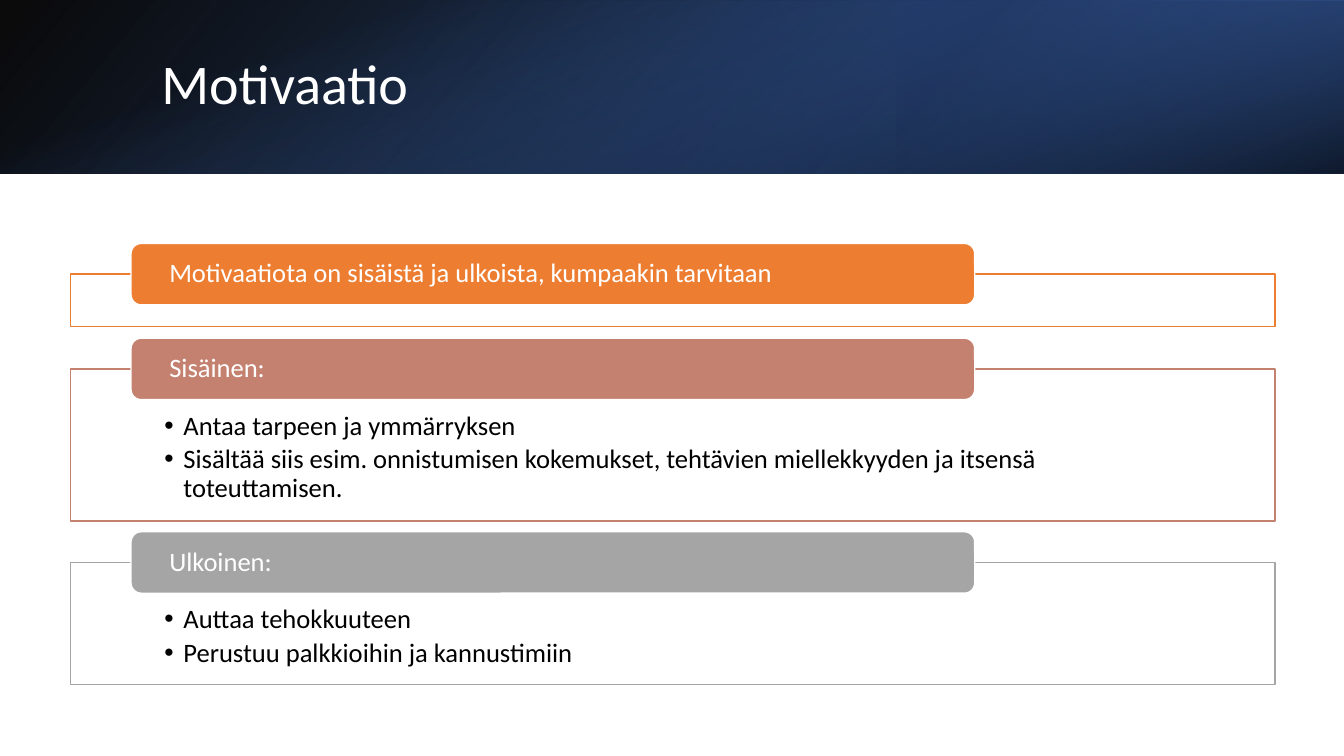
from pptx import Presentation
from pptx.dml.color import RGBColor
from pptx.enum.shapes import MSO_SHAPE as SHAPE
from pptx.enum.text import MSO_ANCHOR as ANCHOR, MSO_AUTO_SIZE as AUTO, PP_ALIGN as ALIGN
from pptx.oxml import parse_xml
from pptx.oxml.ns import nsdecls, qn
from pptx.util import Inches, Pt
from lxml.etree import SubElement

THEME = {
    "font": "Calibri", "title": Pt(40), "text": Pt(19),
    "white": "FFFFFF", "black": "000000",
    "orange": "ED7D31", "rose": "C48170", "grey": "A5A5A5",
    "navy": "203864", "blue": "2F5597", "sky": "4472C4",
}


def add_box(slide, kind, left, top, width, height):
    sp = slide.shapes.add_shape(kind, *map(Inches, (left, top, width, height)))
    sp.shadow.inherit = False
    return sp


def format_text(sp, lines, size, color, insets, anchor, after=0):
    tf = sp.text_frame
    left, top, right, bottom = map(Inches, insets)
    frame = {"word_wrap": True, "auto_size": AUTO.NONE, "vertical_anchor": anchor,
             "margin_left": left, "margin_top": top,
             "margin_right": right, "margin_bottom": bottom}
    for name, value in frame.items():
        setattr(tf, name, value)
    tf.text = "\n".join(lines)
    for p in tf.paragraphs:
        for name, value in {"alignment": ALIGN.LEFT, "line_spacing": 0.9,
                            "space_before": Pt(0), "space_after": Pt(after)}.items():
            setattr(p, name, value)
        for r in p.runs:
            r.font.name = THEME["font"]
            r.font.size = THEME[size]
            r.font.color.rgb = RGBColor.from_string(THEME[color])


prs = Presentation()
prs.slide_width, prs.slide_height = Inches(13.333), Inches(7.5)
slide = prs.slides.add_slide(prs.slide_layouts[3])
title, *lists = slide.placeholders
tree = title._element.getparent()

BANNER = 1.72
banner_layers = [
    ((0, 0, 13.333, BANNER), 0, True, 140, [(0, "black", 96), (100, "blue", 100)]),
    ((8.89, 0, 4.443, BANNER), 180, True, 320, [(19, "navy", 68), (100, "sky", 79)]),
    ((5.8, -5.8, BANNER, 13.333), 90, False, 340, [(23, "sky", 0), (99, "black", 74)]),
]
for place, rotation, flipped, angle, stops in banner_layers:
    sp = add_box(slide, SHAPE.RECTANGLE, *place)
    sp.rotation = rotation
    spPr = sp._element.spPr
    if flipped:
        spPr.find(qn("a:xfrm")).set("flipH", "1")
    marks = "".join(
        f'<a:gs pos="{pos * 1000}"><a:srgbClr val="{THEME[color]}">'
        f'<a:alpha val="{alpha * 1000}"/></a:srgbClr></a:gs>'
        for pos, color, alpha in stops)
    spPr.find(qn("a:prstGeom")).addnext(parse_xml(
        f'<a:gradFill rotWithShape="1" {nsdecls("a")}><a:gsLst>{marks}</a:gsLst>'
        f'<a:lin ang="{angle * 60000}" scaled="0"/></a:gradFill>'))
    sp.line.fill.background()

tree.append(title._element)
title.left, title.top, title.width, title.height = map(Inches, (1.5, 0.38, 10.98, 0.96))
format_text(title, ["Motivaatio"], "title", "white", (0.1, 0.05, 0.1, 0.05), ANCHOR.MIDDLE)

LEFT, WIDTH, BAND = 0.7, 11.95, 0.61
sections = [
    (2.72, 0.52, "orange", "Motivaatiota on sisäistä ja ulkoista, kumpaakin tarvitaan", []),
    (3.66, 1.51, "rose", "Sisäinen:", [
        "Antaa tarpeen ja ymmärryksen",
        "Sisältää siis esim. onnistumisen kokemukset, tehtävien miellekkyyden ja itsensä toteuttamisen."]),
    (5.58, 1.21, "grey", "Ulkoinen:", [
        "Auttaa tehokkuuteen", "Perustuu palkkioihin ja kannustimiin"]),
]
bodies = iter(lists)
for top, height, color, heading, points in sections:
    accent = RGBColor.from_string(THEME[color])
    white = RGBColor.from_string(THEME["white"])
    frame = add_box(slide, SHAPE.RECTANGLE, LEFT, top, WIDTH, height)
    band = add_box(slide, SHAPE.ROUNDED_RECTANGLE, 1.3, top - BAND / 2, 8.37, BAND)
    for sp, fill, line in ((frame, white, accent), (band, accent, white)):
        sp.fill.solid()
        sp.fill.fore_color.rgb = fill
        sp.line.color.rgb = line
        sp.line.width = Pt(1)
    fill_color = frame._element.spPr.find(qn("a:solidFill")).find(qn("a:srgbClr"))
    SubElement(fill_color, qn("a:alpha")).set("val", "90000")
    format_text(band, [heading], "text", "white", (0.35, 0, 0.35, 0), ANCHOR.MIDDLE)
    if points:
        body = next(bodies)
        frame._element.addnext(body._element)
        body.left, body.top, body.width, body.height = map(Inches, (LEFT, top, WIDTH, height))
        format_text(body, points, "text", "black", (0.93, 0.43, 0.93, 0.15), ANCHOR.TOP, 3.4)
        for p in body.text_frame.paragraphs:
            pPr = p._p.get_or_add_pPr()
            pPr.set("marL", str(Inches(0.19)))
            pPr.set("indent", str(Inches(-0.19)))
            SubElement(pPr, qn("a:buChar")).set("char", "•")

prs.save("out.pptx")
